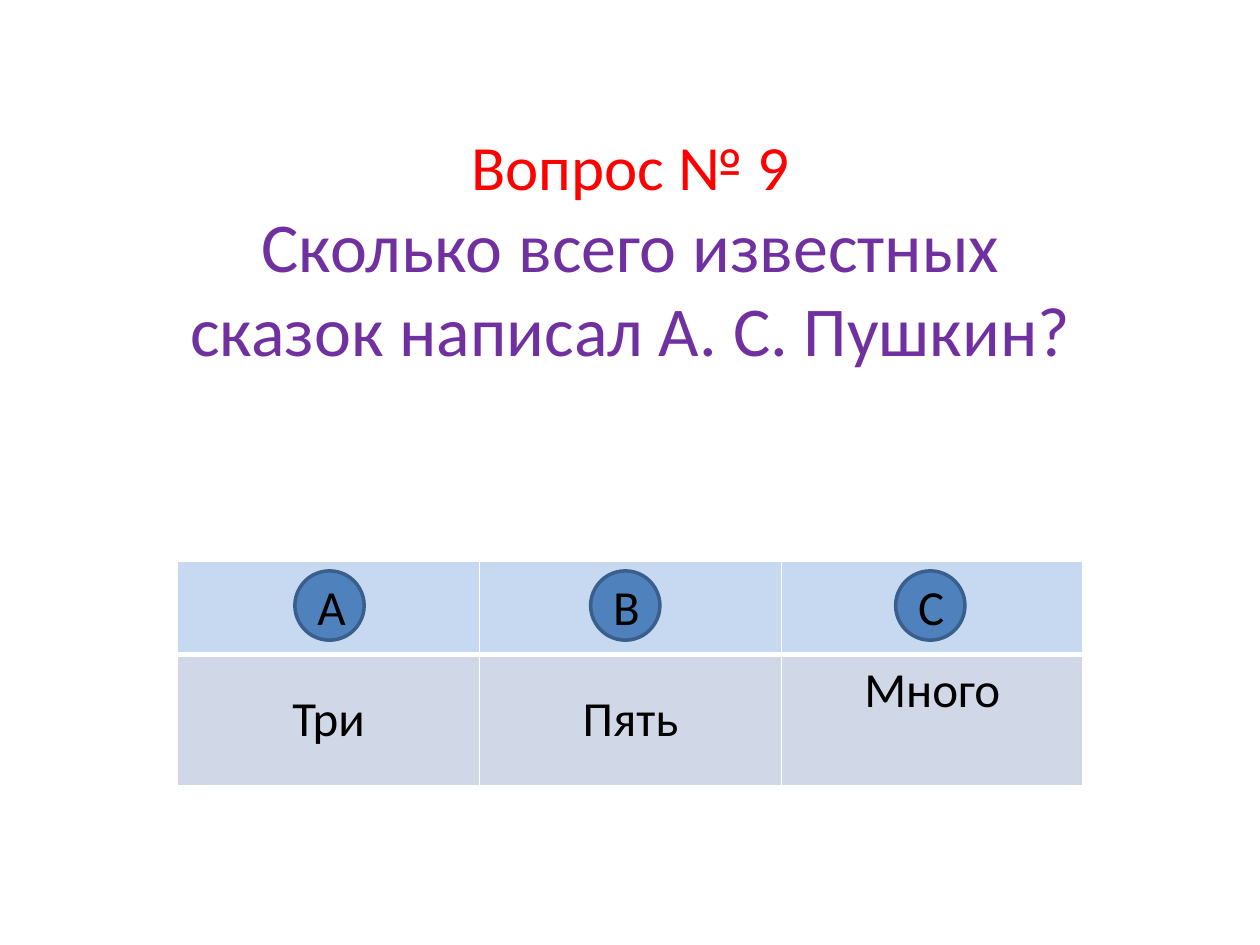
from lxml.etree import SubElement
from pptx import Presentation
from pptx.dml.color import RGBColor
from pptx.enum.shapes import MSO_SHAPE as Shape
from pptx.enum.text import MSO_ANCHOR as Anchor, PP_ALIGN as Align
from pptx.oxml.ns import qn
from pptx.util import Pt

WHITE = RGBColor(0xFF, 0xFF, 0xFF)
BLACK = RGBColor(0, 0, 0)
RED = RGBColor(0xFF, 0, 0)
PURPLE = RGBColor(0x70, 0x30, 0xA0)
HEADER_BLUE = RGBColor(0xC6, 0xD9, 0xF1)
ANSWER_GREY = RGBColor(0xD0, 0xD8, 0xE8)
CIRCLE_BLUE = RGBColor(0x4F, 0x81, 0xBD)
OUTLINE_BLUE = RGBColor(0x3A, 0x5F, 0x8C)


def add_text(para, text, size=28, color=BLACK):
    para.alignment = Align.CENTER
    span = para.add_run()
    span.text = text
    span.font.name = "Calibri"
    span.font.size = Pt(size)
    span.font.color.rgb = color


def add_borders(cell, **widths):
    """Draw white cell borders; call before the cell is filled."""
    props = cell._tc.get_or_add_tcPr()
    for side in "LRTB":
        line = SubElement(props, qn(f"a:ln{side}"), w=str(Pt(widths.get(side, 1))))
        fill = SubElement(line, qn("a:solidFill"))
        SubElement(fill, qn("a:srgbClr"), val=str(WHITE))


deck = Presentation()
deck.slide_width, deck.slide_height = Pt(720), Pt(540)
page = deck.slides.add_slide(deck.slide_layouts[5])

# Question
title = page.shapes.title
title.left, title.top, title.width, title.height = Pt(101.5), Pt(21.6), Pt(517.5), Pt(288)
title.fill.solid()
title.fill.fore_color.rgb = WHITE
frame = title.text_frame
frame.word_wrap = True
frame.vertical_anchor = Anchor.MIDDLE
frame.margin_bottom = Pt(50)
para = frame.paragraphs[0]
add_text(para, "Вопрос № 9", size=36, color=RED)
para.add_line_break()
add_text(para, "Сколько всего известных сказок написал А. С. Пушкин?", size=40, color=PURPLE)

# Answers
answers = [("Три", Anchor.MIDDLE), ("Пять", Anchor.MIDDLE), ("Много", Anchor.TOP)]
table = page.shapes.add_table(2, 3, Pt(101.5), Pt(320.8), Pt(517.5), Pt(128.3)).table
table.rows[0].height, table.rows[1].height = Pt(53.3), Pt(75)
for col, (answer, anchor) in enumerate(answers):
    table.columns[col].width = Pt(172.5)
    header, cell = table.cell(0, col), table.cell(1, col)
    add_borders(header, B=3)
    add_borders(cell, T=3)
    for part, color in ((header, HEADER_BLUE), (cell, ANSWER_GREY)):
        part.fill.solid()
        part.fill.fore_color.rgb = color
    cell.vertical_anchor = anchor
    add_text(cell.text_frame.paragraphs[0], answer)

# Answer letters
for letter, left in (("А", 168.5), ("В", 337.5), ("С", 511.8)):
    circle = page.shapes.add_shape(Shape.OVAL, Pt(left), Pt(326.2), Pt(39.6), Pt(39.6))
    circle.shadow.inherit = False
    circle.fill.solid()
    circle.fill.fore_color.rgb = CIRCLE_BLUE
    circle.line.color.rgb = OUTLINE_BLUE
    circle.line.width = Pt(2)
    circle.text_frame.vertical_anchor = Anchor.MIDDLE
    add_text(circle.text_frame.paragraphs[0], letter)

deck.save("out.pptx")
